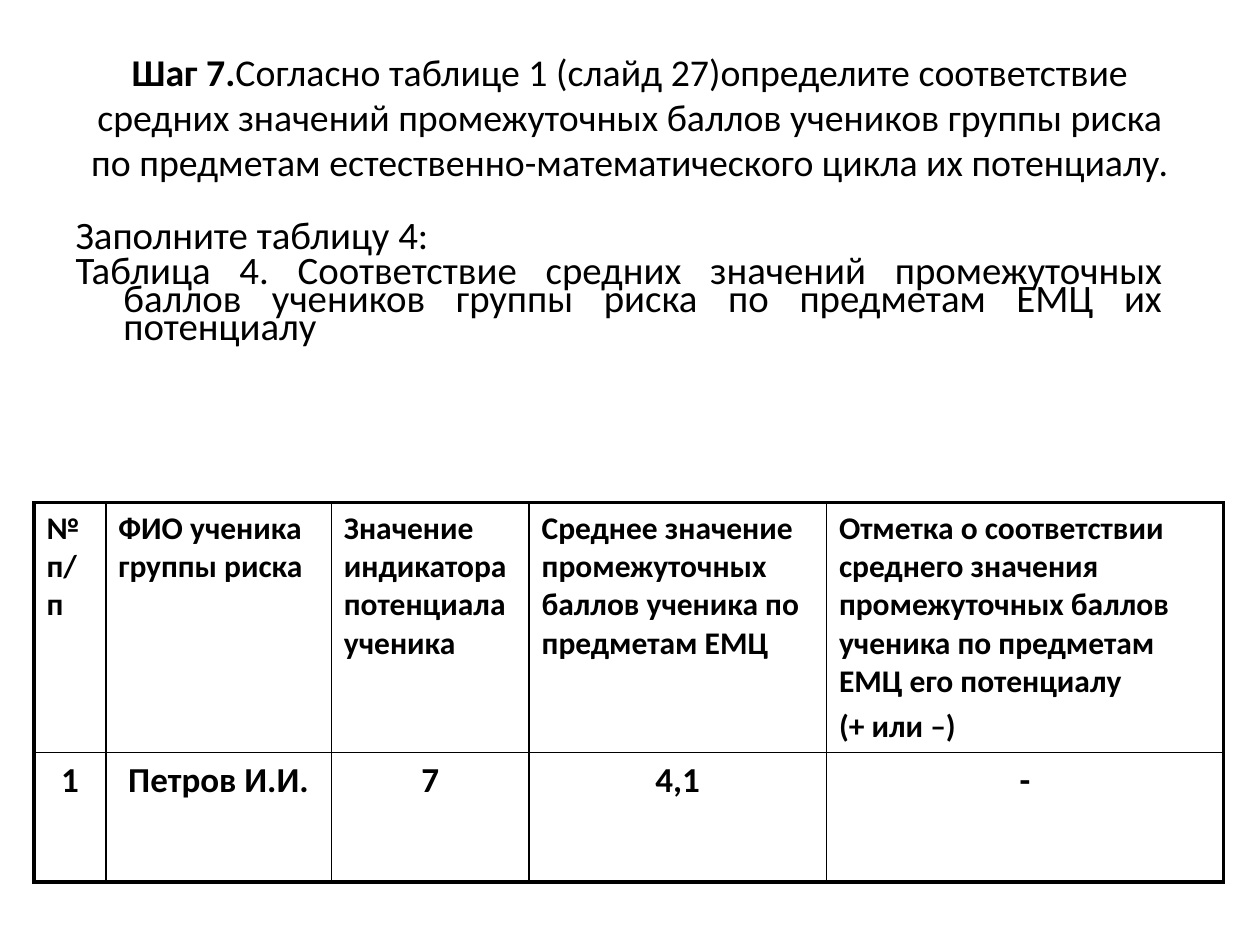
from lxml import etree
from pptx import Presentation
from pptx.dml.color import RGBColor
from pptx.enum.text import MSO_ANCHOR, MSO_AUTO_SIZE, PP_ALIGN
from pptx.oxml.ns import qn
from pptx.util import Inches, Pt

LEFT, CENTER, JUSTIFY = PP_ALIGN.LEFT, PP_ALIGN.CENTER, PP_ALIGN.JUSTIFY
MIDDLE, TOP = MSO_ANCHOR.MIDDLE, MSO_ANCHOR.TOP
NO_AUTOFIT = MSO_AUTO_SIZE.NONE
BLACK = "000000"
THIN, THICK = 1, 2.25


def add_text(paragraph, text, size=18, bold=False, align=LEFT, before=0, spacing=1.0):
    paragraph.alignment = align
    paragraph.space_before = Pt(before)
    paragraph.line_spacing = spacing
    run = paragraph.add_run()
    run.text = text
    run.font.name = "Calibri"
    run.font.size = Pt(size)
    run.font.bold = bold
    run.font.color.rgb = RGBColor.from_string(BLACK)


def set_borders(cell, widths):
    properties = cell._tc.get_or_add_tcPr()
    for position, (side, width) in enumerate(widths.items()):
        line = etree.Element(qn(f"a:ln{side}"), w=str(Pt(width)))
        fill = etree.SubElement(line, qn("a:solidFill"))
        etree.SubElement(fill, qn("a:srgbClr"), val=BLACK)
        properties.insert(position, line)


presentation = Presentation()
presentation.slide_width = Inches(10)
presentation.slide_height = Inches(7.5)
slide = presentation.slides.add_slide(presentation.slide_layouts[1])

title, body = slide.shapes.title, slide.placeholders[1]
for shape, box, anchor in (
    (title, (0.5, 0.3, 9, 1.25), MIDDLE),
    (body, (0.5, 1.75, 8.83, 1.06), TOP),
):
    shape.left, shape.top, shape.width, shape.height = map(Inches, box)
    shape.text_frame.word_wrap = True
    shape.text_frame.auto_size = NO_AUTOFIT
    shape.text_frame.vertical_anchor = anchor

heading = title.text_frame.paragraphs[0]
add_text(heading, "Шаг 7.", size=21.6, bold=True, align=CENTER)
add_text(
    heading,
    "Согласно таблице 1 (слайд 27)определите соответствие средних значений "
    "промежуточных баллов учеников группы риска по предметам "
    "естественно-математического цикла их потенциалу.",
    size=21.6,
    align=CENTER,
)

body_lines = [
    ("Заполните таблицу 4:", LEFT),
    ("Таблица 4. Соответствие средних значений промежуточных баллов учеников "
     "группы риска по предметам ЕМЦ их потенциалу", JUSTIFY),
]
for index, (text, align) in enumerate(body_lines):
    frame = body.text_frame
    paragraph = frame.add_paragraph() if index else frame.paragraphs[0]
    add_text(paragraph, text, size=22.2, align=align, before=4.4, spacing=0.6)
    properties = paragraph._p.get_or_add_pPr()
    properties.set("marL", str(Inches(0.38)))
    properties.set("indent", str(Inches(-0.38)))
    etree.SubElement(properties, qn("a:buNone"))

rows = [
    ["№ п/п",
     "ФИО ученика группы риска",
     "Значение индикатора потенциала ученика",
     "Среднее значение промежуточных баллов ученика по предметам ЕМЦ",
     "Отметка о соответствии среднего значения промежуточных баллов ученика "
     "по предметам ЕМЦ его потенциалу\n(+ или –)"],
    ["1", "Петров И.И.", "7", "4,1", "-"],
]
column_widths = [0.57, 1.79, 1.57, 2.36, 3.15]
row_heights = [1.96, 1.03]
row_formats = [
    {"size": 18, "align": LEFT, "before": 3.6},
    {"size": 20, "align": CENTER, "before": 4},
]
last_row, last_column = len(rows) - 1, len(column_widths) - 1

table = slide.shapes.add_table(
    len(rows), len(column_widths), Inches(0.27), Inches(3.99), Inches(9.45), Inches(2.99)
).table
table.first_row = False
table.horz_banding = False
for column, width in zip(table.columns, column_widths):
    column.width = Inches(width)

for row_index, texts in enumerate(rows):
    table.rows[row_index].height = Inches(row_heights[row_index])
    for column_index, text in enumerate(texts):
        cell = table.cell(row_index, column_index)
        cell.fill.background()
        for index, line in enumerate(text.split("\n")):
            frame = cell.text_frame
            paragraph = frame.add_paragraph() if index else frame.paragraphs[0]
            add_text(paragraph, line, bold=True, **row_formats[row_index])
        set_borders(cell, {
            "L": THICK if column_index == 0 else THIN,
            "R": THICK if column_index == last_column else THIN,
            "T": THICK if row_index == 0 else THIN,
            "B": THICK if row_index == last_row else THIN,
        })

presentation.save("out.pptx")
